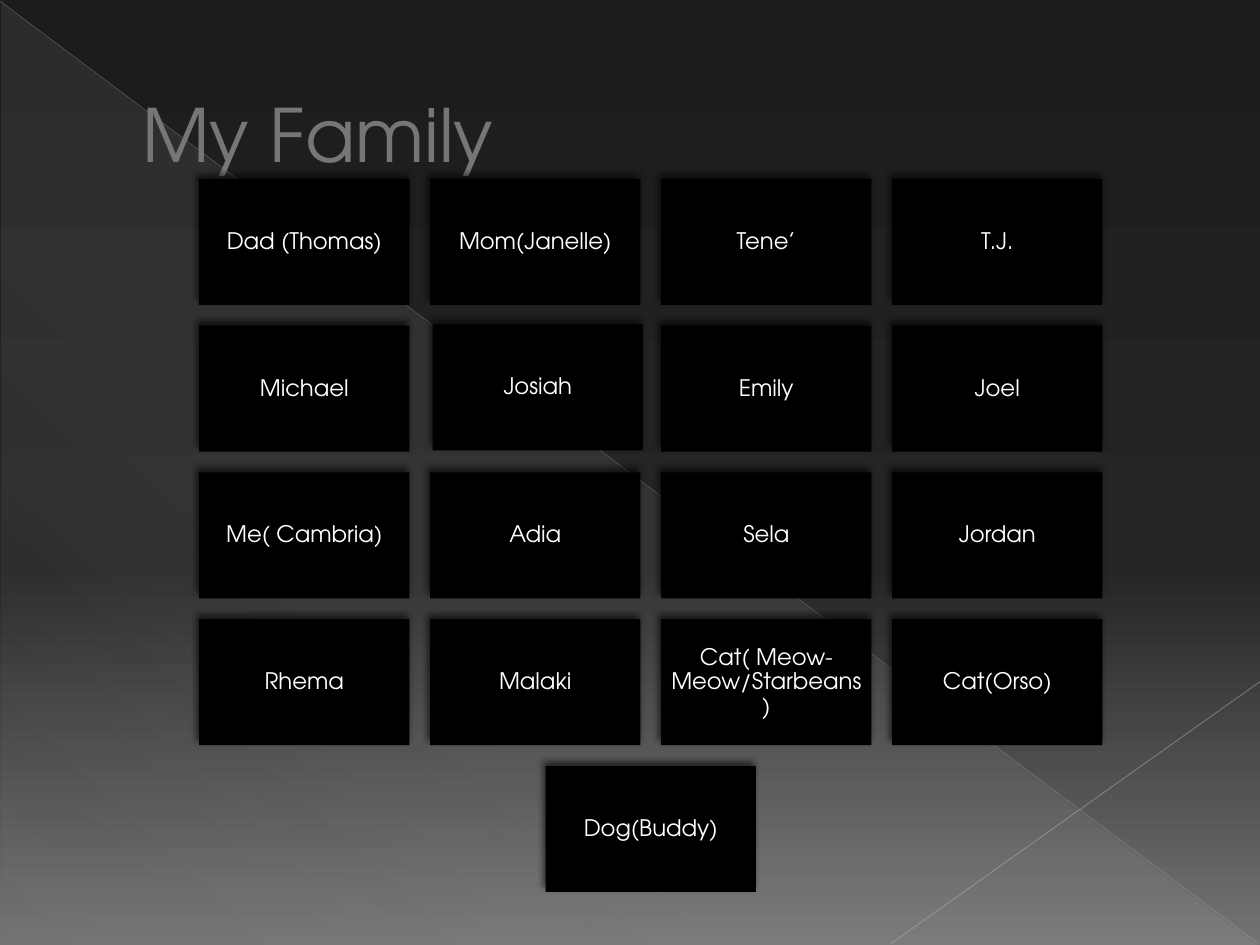
import pptx
import pptx.dml.color
import pptx.enum.shapes
import pptx.enum.text
import pptx.oxml
import pptx.oxml.ns
import pptx.util
from pptx.util import Inches

FONT = "TeX Gyre Adventor"
COLORS = {
    "night": "1C1C1C", "charcoal": "252525", "ash": "737373",
    "sheen": "D2D2D2", "falling_line": "B5B5B5", "rising_line": "BEBEBE",
    "title": "767676", "tile": "000000", "tile_text": "FFFFFF",
}
FAMILY_ROWS = [
    ["Dad (Thomas)", "Mom(Janelle)", "Tene’", "T.J."],
    ["Michael", "Josiah", "Emily", "Joel"],
    ["Me( Cambria)", "Adia", "Sela", "Jordan"],
    ["Rhema", "Malaki", "Cat( Meow-Meow/Starbeans)", "Cat(Orso)"],
    ["Dog(Buddy)"],
]
NUDGES = {"Josiah": (Inches(0.02), Inches(-0.01))}
TILE_SIZE = (Inches(1.67), Inches(1))


def rgb(name):
    return pptx.dml.color.RGBColor.from_string(COLORS[name])


def apply_format(target, values):
    for attribute, value in values.items():
        setattr(target, attribute, value)


def drawing_xml(markup):
    """Parse one DrawingML element, adding the namespace to its first tag."""
    tag, rest = markup.split(" ", 1)
    return pptx.oxml.parse_xml(f'{tag} {pptx.oxml.ns.nsdecls("a")} {rest}')


def color_xml(name, opacity=100):
    return (f'<a:srgbClr val="{COLORS[name]}">'
            f'<a:alpha val="{opacity * 1000}"/></a:srgbClr>')


def set_gradient(fill, stops, angle):
    """Fill with (position, color name, opacity) stops, in percent."""
    fill.gradient()
    fill.gradient_angle = -angle % 360
    stop_list = fill.gradient_stops._gsLst
    for stop in list(stop_list):
        stop_list.remove(stop)
    for position, name, opacity in stops:
        stop_list.append(drawing_xml(
            f'<a:gs pos="{position * 1000}">{color_xml(name, opacity)}</a:gs>'))


def add_backdrop_line(slide, start, end, name, width, opacity):
    line = slide.shapes.add_connector(
        pptx.enum.shapes.MSO_CONNECTOR.STRAIGHT, *start, *end)
    line.line.color.rgb = rgb(name)
    line.line.width = pptx.util.Pt(width)
    color = line.line._ln.find(".//" + pptx.oxml.ns.qn("a:srgbClr"))
    color.append(drawing_xml(f'<a:alpha val="{opacity * 1000}"/>'))
    line._element.spPr.append(drawing_xml('<a:effectLst />'))


def add_backdrop(slide, left, top, width, height):
    set_gradient(slide.background.fill, [
        (0, "night", 100), (60, "charcoal", 100), (100, "ash", 100)], 90)
    triangle = slide.shapes.add_shape(
        pptx.enum.shapes.MSO_SHAPE.RIGHT_TRIANGLE,
        left + Inches(0.01), top + Inches(0.02),
        width - Inches(0.02), height - Inches(0.02))
    triangle.shadow.inherit = False
    triangle.line.fill.background()
    set_gradient(triangle.fill, [
        (0, "sheen", 10), (70, "sheen", 8), (100, "sheen", 1)], 133)
    right, bottom = left + width, top + height - Inches(0.01)
    add_backdrop_line(slide, (left, top + Inches(0.01)),
                      (right - Inches(0.01), bottom), "falling_line", 0.39, 35)
    add_backdrop_line(slide, (right, top + Inches(5.41)),
                      (left + Inches(7.07), bottom), "rising_line", 0.47, 45)


def place_title(slide, left, top, width, height):
    title = slide.shapes.title
    slide.shapes._spTree.append(title._element)  # in front of the backdrop
    apply_format(title, {"left": left, "top": top,
                         "width": width, "height": height})
    frame = title.text_frame
    frame.text = "My Family"
    frame.vertical_anchor = pptx.enum.text.MSO_ANCHOR.MIDDLE
    paragraph = frame.paragraphs[0]
    paragraph.alignment = pptx.enum.text.PP_ALIGN.LEFT
    paragraph._p.get_or_add_pPr().set("marL", str(Inches(0.53)))
    font = paragraph.runs[0].font
    apply_format(font, {"name": FONT, "size": pptx.util.Pt(42)})
    font.color.rgb = rgb("title")
    font._element.insert(0, drawing_xml(
        f'<a:ln w="{pptx.util.Pt(0.5)}"><a:solidFill>{color_xml("tile")}'
        '</a:solidFill></a:ln>'))


def add_tile(slide, name, left, top):
    tile = slide.shapes.add_shape(
        pptx.enum.shapes.MSO_SHAPE.RECTANGLE, left, top, *TILE_SIZE)
    tile.fill.solid()
    tile.fill.fore_color.rgb = rgb("tile")
    tile.line.fill.background()
    tile.shadow.inherit = False
    effects = tile._element.spPr.find(pptx.oxml.ns.qn("a:effectLst"))
    effects.append(drawing_xml(
        f'<a:outerShdw blurRad="{pptx.util.Pt(4)}" dist="{pptx.util.Pt(3)}" '
        f'dir="{245 * 60000}" rotWithShape="0">'
        f'{color_xml("tile", 60)}</a:outerShdw>'))
    frame = tile.text_frame
    margins = ("margin_left", "margin_top", "margin_right", "margin_bottom")
    apply_format(frame, dict.fromkeys(margins, Inches(0.05)))
    apply_format(frame, {
        "text": name, "word_wrap": True,
        "vertical_anchor": pptx.enum.text.MSO_ANCHOR.MIDDLE})
    paragraph = frame.paragraphs[0]
    apply_format(paragraph, {
        "alignment": pptx.enum.text.PP_ALIGN.CENTER, "line_spacing": 0.9})
    font = paragraph.runs[0].font
    apply_format(font, {"name": FONT, "size": pptx.util.Pt(13)})
    font.color.rgb = rgb("tile_text")


def add_family_grid(slide, left, top, width, height):
    """Spread the tiles evenly over the box and centre any short row."""
    tile_width, tile_height = TILE_SIZE
    columns = max(len(row) for row in FAMILY_ROWS)
    column_step = (width - tile_width) / (columns - 1)
    row_step = (height - tile_height) / (len(FAMILY_ROWS) - 1)
    for row_index, row in enumerate(FAMILY_ROWS):
        indent = (columns - len(row)) * column_step / 2
        for column_index, name in enumerate(row):
            shift_x, shift_y = NUDGES.get(name, (0, 0))
            add_tile(slide, name,
                     round(left + indent + column_index * column_step + shift_x),
                     round(top + row_index * row_step + shift_y))


def main():
    presentation = pptx.Presentation()
    apply_format(presentation, {"slide_width": Inches(10),
                                "slide_height": Inches(7.5)})
    slide = presentation.slides.add_slide(
        presentation.slide_layouts.get_by_name("Title Only"))
    add_backdrop(slide, 0, 0, presentation.slide_width,
                 presentation.slide_height)
    place_title(slide, Inches(0.5), Inches(0.29), Inches(9), Inches(1.53))
    add_family_grid(slide, Inches(1.58), Inches(1.42),
                    Inches(7.17), Inches(5.66))
    presentation.save("out.pptx")


if __name__ == "__main__":
    main()
